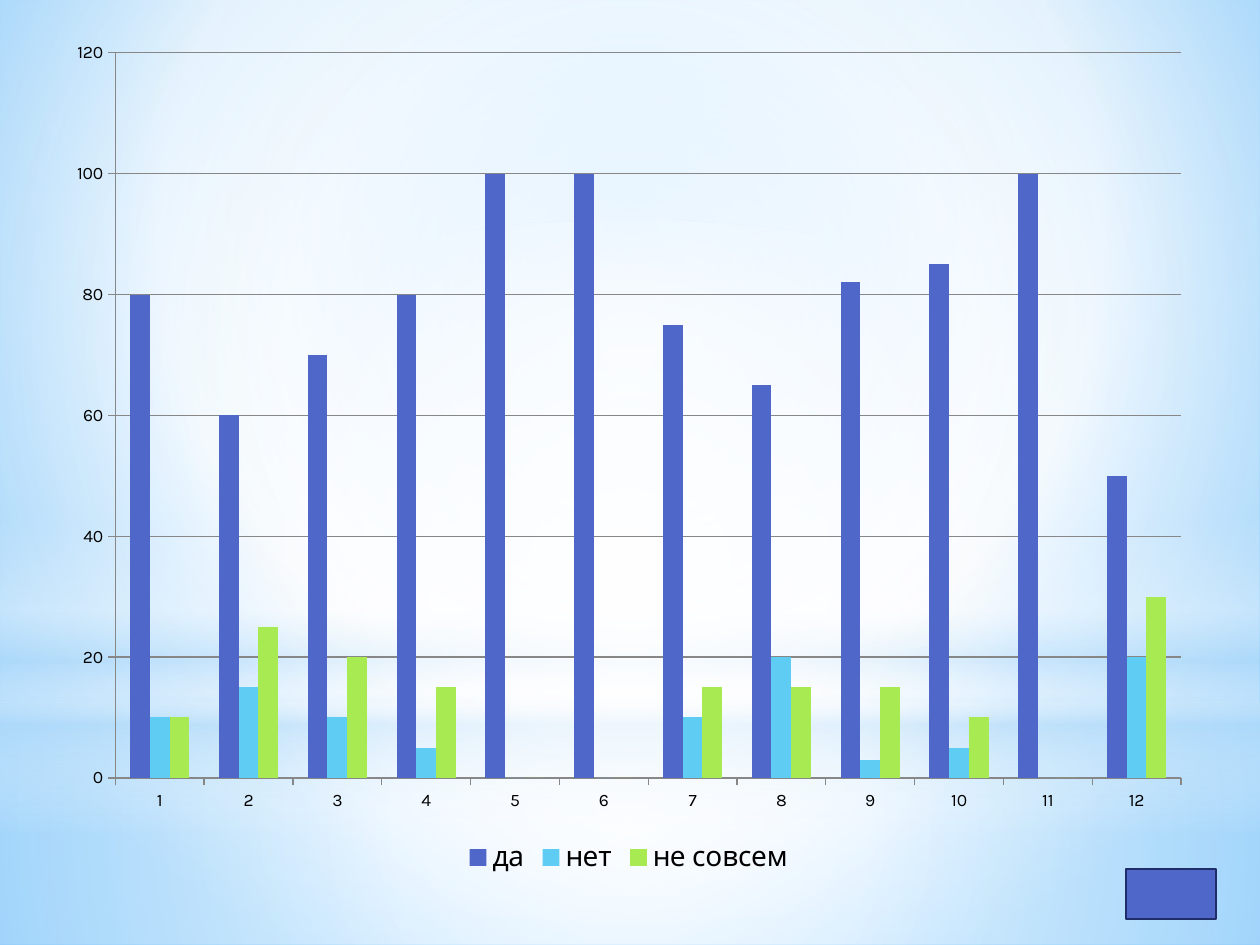
from dataclasses import dataclass
from typing import Any, NamedTuple

import lxml.etree
import pptx
import pptx.chart.data
import pptx.dml.color
import pptx.enum.chart
import pptx.enum.shapes
import pptx.oxml
import pptx.oxml.ns
import pptx.util

PX = 914400 / 126
SHAPES = pptx.enum.shapes.MSO_SHAPE


@dataclass(frozen=True)
class Theme:
    blue: str = "4E67C8"
    cyan: str = "5ECCF3"
    green: str = "A7EA52"
    outline: str = "1F2E69"
    grid: str = "878787"
    text: str = "000000"
    white: str = "FFFFFF"
    haze: str = "B4DCFA"
    sky_light: str = "9ED5FF"
    sky_deep: str = "5BB9FF"
    font: str = "Karla"
    axis_size: int = 10
    legend_size: int = 16


THEME = Theme()


class Box(NamedTuple):
    left: int
    top: int
    width: int
    height: int


class Stop(NamedTuple):
    position: int
    color: str
    opacity: int = 100


@dataclass(frozen=True)
class Gradient:
    """Circular around the focus insets (left, top, right, bottom), or linear without them."""
    stops: tuple[Stop, ...]
    focus: tuple[int, int, int, int] | None = (50, 50, 50, 50)


@dataclass(frozen=True)
class Glow:
    kind: Any
    box: Box
    gradient: Gradient


@dataclass(frozen=True)
class Answer:
    name: str
    color: str
    values: tuple[int, ...]


BACKGROUND = Gradient(
    (Stop(0, THEME.sky_light), Stop(60, THEME.white), Stop(100, THEME.sky_deep)),
    focus=(20, 10, 20, 60))

GLOWS = (
    Glow(SHAPES.RECTANGLE, Box(0, 703, 1260, 242), Gradient(
        (Stop(0, THEME.white, 91), Stop(37, THEME.white, 76), Stop(100, THEME.haze, 79)))),
    Glow(SHAPES.RECTANGLE, Box(0, 0, 1260, 703), Gradient(
        (Stop(0, THEME.white, 89), Stop(48, THEME.white, 62), Stop(100, THEME.haze, 79)))),
    Glow(SHAPES.RECTANGLE, Box(0, 519, 1260, 315), Gradient(
        (Stop(0, THEME.white, 0), Stop(29, THEME.white, 30), Stop(45, THEME.haze, 40),
         Stop(55, THEME.white, 26), Stop(65, THEME.haze, 60), Stop(100, THEME.white, 0)),
        focus=None)),
    Glow(SHAPES.OVAL, Box(0, 220, 1260, 703), Gradient(
        (Stop(0, THEME.white), Stop(56, THEME.white, 0)))),
)

ANSWERS = (
    Answer("да", THEME.blue, (80, 60, 70, 80, 100, 100, 75, 65, 82, 85, 100, 50)),
    Answer("нет", THEME.cyan, (10, 15, 10, 5, 0, 0, 10, 20, 3, 5, 0, 20)),
    Answer("не совсем", THEME.green, (10, 25, 20, 15, 0, 0, 15, 15, 15, 10, 0, 30)),
)


def emu(box: Box) -> list[int]:
    return [round(length * PX) for length in box]


def rgb(color: str) -> pptx.dml.color.RGBColor:
    return pptx.dml.color.RGBColor.from_string(color)


def apply_gradient(fill: Any, element: Any, gradient: Gradient) -> None:
    """Swap the solid fill inside element for the gradient."""
    fill.solid()
    solid = element.xpath(".//a:solidFill")[0]
    stops = "".join(
        f'<a:gs pos="{stop.position * 1000}"><a:srgbClr val="{stop.color}">'
        f'<a:alpha val="{stop.opacity * 1000}"/></a:srgbClr></a:gs>'
        for stop in gradient.stops)
    if gradient.focus:
        insets = " ".join(f'{side}="{inset * 1000}"'
                          for side, inset in zip("ltrb", gradient.focus))
        direction = f'<a:path path="circle"><a:fillToRect {insets}/></a:path>'
    else:
        direction = '<a:lin ang="5400000" scaled="0"/>'
    solid.getparent().replace(solid, pptx.oxml.parse_xml(
        f'<a:gradFill {pptx.oxml.ns.nsdecls("a")} rotWithShape="1">'
        f'<a:gsLst>{stops}</a:gsLst>{direction}</a:gradFill>'))


def draw_glow(slide: Any, glow: Glow) -> None:
    shape = slide.shapes.add_shape(glow.kind, *emu(glow.box))
    shape.shadow.inherit = False
    shape.line.fill.background()
    apply_gradient(shape.fill, shape.element.spPr, glow.gradient)


def style_font(font: Any, size: int) -> None:
    font.name = THEME.font
    font.size = pptx.util.Pt(size)
    font.color.rgb = rgb(THEME.text)


def style_line(line: Any) -> None:
    line.color.rgb = rgb(THEME.grid)
    line.width = pptx.util.Pt(0.75)


def draw_chart(slide: Any, box: Box, answers: tuple[Answer, ...]) -> None:
    data = pptx.chart.data.CategoryChartData()
    data.categories = [str(number + 1) for number in range(len(answers[0].values))]
    for answer in answers:
        data.add_series(answer.name, answer.values)
    chart = slide.shapes.add_chart(
        pptx.enum.chart.XL_CHART_TYPE.COLUMN_CLUSTERED, *emu(box), data).chart
    chart.has_title = False
    style_font(chart.font, THEME.axis_size)

    plot = chart.plots[0]
    plot.gap_width = 150
    plot.overlap = 0
    plot.vary_by_categories = False
    for series, answer in zip(plot.series, answers):
        series.format.fill.solid()
        series.format.fill.fore_color.rgb = rgb(answer.color)

    for axis in (chart.category_axis, chart.value_axis):
        axis.major_tick_mark = pptx.enum.chart.XL_TICK_MARK.OUTSIDE
        style_line(axis.format.line)
    chart.value_axis.minimum_scale = 0
    chart.value_axis.maximum_scale = 120
    chart.value_axis.major_unit = 20
    style_line(chart.value_axis.major_gridlines.format.line)

    chart.has_legend = True
    chart.legend.position = pptx.enum.chart.XL_LEGEND_POSITION.BOTTOM
    chart.legend.include_in_layout = False
    style_font(chart.legend.font, THEME.legend_size)


def draw_button(slide: Any, box: Box) -> None:
    button = slide.shapes.add_shape(SHAPES.RECTANGLE, *emu(box))
    button.shadow.inherit = False
    button.fill.solid()
    button.fill.fore_color.rgb = rgb(THEME.blue)
    button.line.color.rgb = rgb(THEME.outline)
    button.line.width = pptx.util.Pt(1.25)


def main() -> None:
    presentation = pptx.Presentation()
    presentation.slide_width = pptx.util.Inches(10)
    presentation.slide_height = pptx.util.Inches(7.5)
    slide = presentation.slides.add_slide(presentation.slide_layouts[6])
    apply_gradient(slide.background.fill, slide.element, BACKGROUND)
    for glow in GLOWS:
        draw_glow(slide, glow)
    draw_chart(slide, Box(54, 26, 1150, 853), ANSWERS)
    draw_button(slide, Box(1126, 869, 90, 50))
    presentation.save("out.pptx")


if __name__ == "__main__":
    main()
